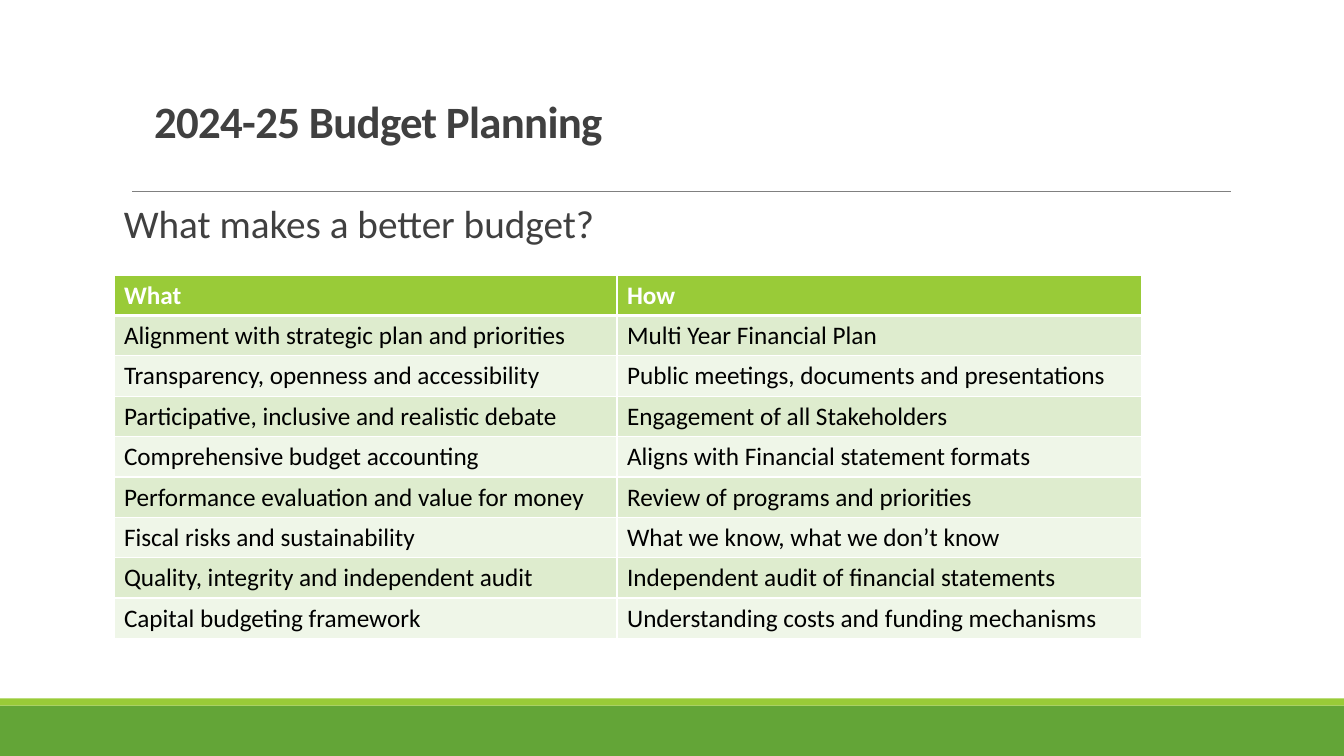
import pptx
import pptx.util
import pptx.dml.color
import pptx.enum.shapes
import pptx.enum.text
import pptx.oxml.ns
from lxml import etree

Inches = pptx.util.Inches
Pt = pptx.util.Pt
RGBColor = pptx.dml.color.RGBColor
qn = pptx.oxml.ns.qn

GREEN = RGBColor(0x63, 0xA5, 0x37)
LIME = RGBColor(0x99, 0xCB, 0x38)
BAND_DARK = RGBColor(0xDE, 0xEC, 0xCE)
BAND_LIGHT = RGBColor(0xEF, 0xF6, 0xE8)
GREY = RGBColor(0x80, 0x80, 0x80)
TEXT = RGBColor(0x40, 0x40, 0x40)
BLACK = RGBColor(0, 0, 0)
WHITE = RGBColor(0xFF, 0xFF, 0xFF)

BUDGET_PRACTICES = [
    ("What", "How"),
    ("Alignment with strategic plan and priorities", "Multi Year Financial Plan"),
    ("Transparency, openness and accessibility", "Public meetings, documents and presentations"),
    ("Participative, inclusive and realistic debate", "Engagement of all Stakeholders"),
    ("Comprehensive budget accounting", "Aligns with Financial statement formats"),
    ("Performance evaluation and value for money", "Review of programs and priorities"),
    ("Fiscal risks and sustainability", "What we know, what we don’t know"),
    ("Quality, integrity and independent audit", "Independent audit of financial statements"),
    ("Capital budgeting framework", "Understanding costs and funding mechanisms"),
]


def write(frame, words, size, color, bold=False):
    """Put one Calibri run into a text frame and return its paragraph."""
    paragraph = frame.paragraphs[0]
    run = paragraph.add_run()
    run.text = words
    for name, value in {"name": "Calibri", "size": Pt(size), "bold": bold}.items():
        setattr(run.font, name, value)
    run.font.color.rgb = color
    return paragraph


def add_border(cell, side, width):
    """Draw a white border on one side (L, R, T or B) of a cell."""
    properties = cell._tc.get_or_add_tcPr()
    border = etree.SubElement(properties, qn(f"a:ln{side}"), w=str(Pt(width)))
    fill = etree.SubElement(border, qn("a:solidFill"))
    etree.SubElement(fill, qn("a:srgbClr"), val=str(WHITE))


deck = pptx.Presentation()
deck.slide_width = Inches(13.33)
deck.slide_height = Inches(7.5)
slide = deck.slides.add_slide(deck.slide_layouts[6])
shapes = slide.shapes

# Footer bands
for top, height, color in [(7, 0.5, GREEN), (6.93, 0.07, LIME)]:
    band = shapes.add_shape(pptx.enum.shapes.MSO_SHAPE.RECTANGLE,
                            0, Inches(top), deck.slide_width, Inches(height))
    band.shadow.inherit = False
    band.fill.solid()
    band.fill.fore_color.rgb = color
    band.line.fill.background()

# Rule under the title
rule = shapes.add_connector(pptx.enum.shapes.MSO_CONNECTOR.STRAIGHT,
                            Inches(1.31), Inches(1.9), Inches(12.21), Inches(1.9))
rule.line.color.rgb = GREY
rule.line.width = Pt(0.5)
etree.SubElement(rule._element.spPr, qn("a:effectLst"))

# Title and question
title = shapes.add_textbox(Inches(1.43), Inches(0.69), Inches(7.62), Inches(0.82)).text_frame
title.word_wrap = True
title.vertical_anchor = pptx.enum.text.MSO_ANCHOR.BOTTOM
heading = write(title, "2024-25 Budget Planning", 32, TEXT, bold=True)
heading.line_spacing = 0.85
heading.runs[0].font._element.set("spc", "-50")

question = shapes.add_textbox(Inches(1.13), Inches(2.02), Inches(11.07), Inches(0.53)).text_frame
question.word_wrap = True
question.margin_right = 0
write(question, "What makes a better budget?", 28, TEXT).line_spacing = 0.8

# Table of practices
column_widths = [4.99, 5.2]
practices = shapes.add_table(len(BUDGET_PRACTICES), len(column_widths), Inches(1.13), Inches(2.73),
                             Inches(sum(column_widths)), Inches(3.6)).table
for column, width in zip(practices.columns, column_widths):
    column.width = Inches(width)

for row, practice in enumerate(BUDGET_PRACTICES):
    header = row == 0
    if header:
        row_fill = LIME
    else:
        row_fill = BAND_DARK if row % 2 else BAND_LIGHT
    for column, words in enumerate(practice):
        cell = practices.cell(row, column)
        write(cell.text_frame, words, 18, WHITE if header else BLACK, bold=header)
        borders = {"L": 1, "R": 1, "T": 3 if row == 1 else 1, "B": 3 if header else 1}
        for side, width in borders.items():
            add_border(cell, side, width)
        cell.fill.solid()
        cell.fill.fore_color.rgb = row_fill

deck.save("out.pptx")
